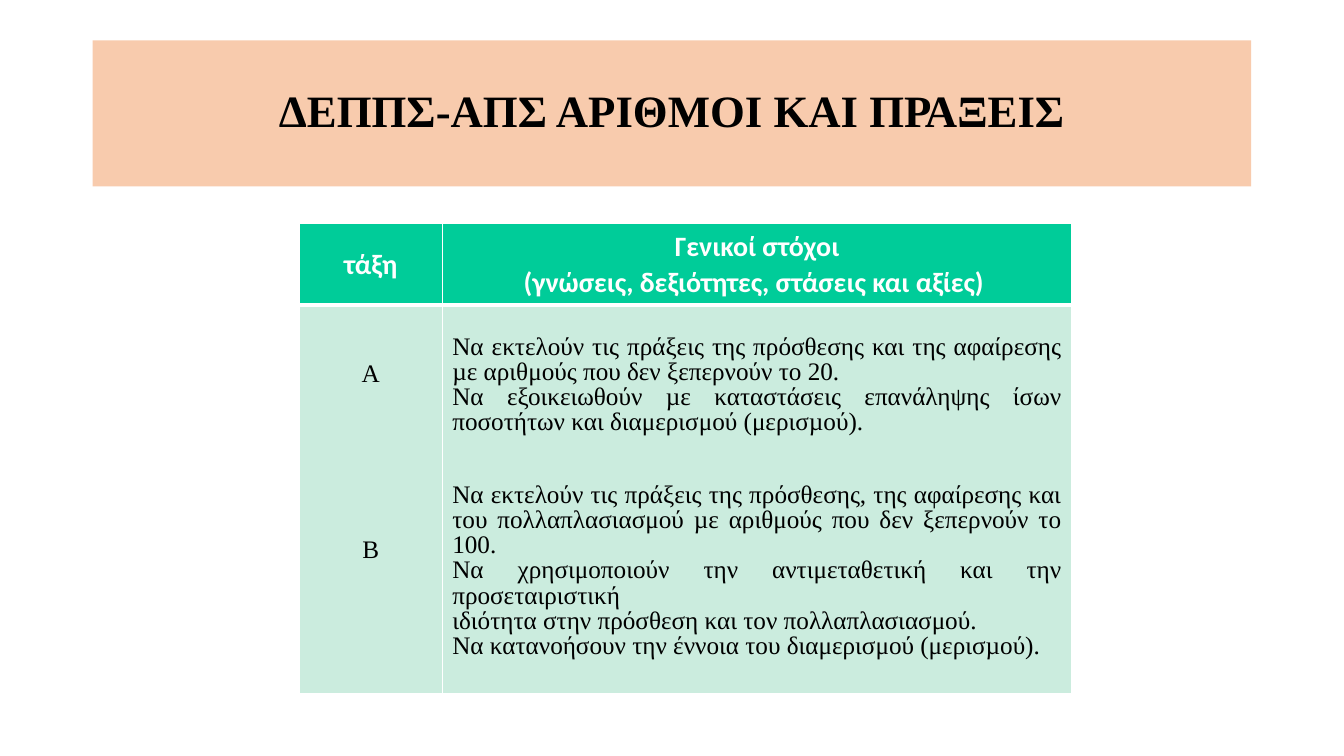
from dataclasses import dataclass

from lxml import etree
from pptx import Presentation
from pptx.dml.color import RGBColor
from pptx.enum.shapes import MSO_SHAPE
from pptx.enum.text import MSO_ANCHOR, PP_ALIGN
from pptx.oxml.ns import qn
from pptx.util import Inches, Pt

RECTANGLE = MSO_SHAPE.RECTANGLE
TOP, MIDDLE = MSO_ANCHOR.TOP, MSO_ANCHOR.MIDDLE
CENTER, JUSTIFY = PP_ALIGN.CENTER, PP_ALIGN.JUSTIFY
SERIF, SANS = "Times New Roman", "Calibri"
BLACK, WHITE = "000000", "FFFFFF"
PEACH, GREEN, MINT = "F8CBAD", "00CC99", "CBECDE"
THIN, THICK = 0.91, 2.95
COLUMN_WIDTHS = (1.42, 6.25)
ROW_HEIGHTS = (0.78, 3.85)


@dataclass(frozen=True)
class TextStyle:
    font: str
    size: float
    color: str
    bold: bool
    align: PP_ALIGN
    line_spacing: float


@dataclass(frozen=True)
class Line:
    text: str
    space_before: float = 0


@dataclass(frozen=True)
class Cell:
    row: int
    column: int
    lines: tuple[Line, ...]
    style: TextStyle
    fill: str
    anchor: MSO_ANCHOR
    top_margin: float


TITLE = TextStyle(SERIF, 32, BLACK, True, CENTER, 0.9)
HEADER = TextStyle(SANS, 20, WHITE, True, CENTER, 1.04)
GRADE = TextStyle(SERIF, 18, BLACK, False, CENTER, 0.9)
GOAL = TextStyle(SERIF, 18, BLACK, False, JUSTIFY, 0.9)

GRADES = (Line("Α"), Line("Β", 107.6))
GOALS = (
    Line("Να εκτελούν τις πράξεις της πρόσθεσης και της αφαίρεσης µε αριθμούς που δεν ξεπερνούν το 20."),
    Line("Να εξοικειωθούν µε καταστάσεις επανάληψης ίσων ποσοτήτων και διαμερισμού (μερισµού). "),
    Line("Να εκτελούν τις πράξεις της πρόσθεσης, της αφαίρεσης και του πολλαπλασιασμού µε αριθμούς "
         "που δεν ξεπερνούν το 100. ", 34),
    Line("Να χρησιμοποιούν την αντιμεταθετική και την προσεταιριστική"),
    Line("ιδιότητα στην πρόσθεση και τον πολλαπλασιασμού."),
    Line("Να κατανοήσουν την έννοια του διαμερισμού (μερισµού). "),
)
CELLS = (
    Cell(0, 0, (Line("τάξη"),), HEADER, GREEN, MIDDLE, 0.05),
    Cell(0, 1, (Line("Γενικοί στόχοι\v(γνώσεις, δεξιότητες, στάσεις και αξίες) "),),
         HEADER, GREEN, MIDDLE, 0.05),
    Cell(1, 0, GRADES, GRADE, MINT, TOP, 0.57),
    Cell(1, 1, GOALS, GOAL, MINT, TOP, 0.3),
)


def paint(target, color: str) -> None:
    target.fill.solid()
    target.fill.fore_color.rgb = RGBColor.from_string(color)


def write(frame, lines: tuple[Line, ...], style: TextStyle) -> None:
    frame.word_wrap = True
    frame.text = "\n".join(line.text for line in lines)
    for para, line in zip(frame.paragraphs, lines):
        para.alignment = style.align
        para.line_spacing = style.line_spacing
        para.space_before = Pt(line.space_before)
        for span in para.runs:
            span.font.name = style.font
            span.font.size = Pt(style.size)
            span.font.bold = style.bold
            span.font.color.rgb = RGBColor.from_string(style.color)


def add_borders(cell, widths: dict[str, float]) -> None:
    properties = cell._tc.get_or_add_tcPr()
    for index, (side, width) in enumerate(widths.items()):
        border = etree.Element(qn(f"a:{side}"), w=str(Pt(width)))
        fill = etree.SubElement(border, qn("a:solidFill"))
        etree.SubElement(fill, qn("a:srgbClr"), val=WHITE)
        properties.insert(index, border)


def add_title(page) -> None:
    box = page.shapes.add_shape(RECTANGLE, Inches(0.92), Inches(0.4), Inches(11.5), Inches(1.45))
    box.shadow.inherit = False
    box.line.fill.background()
    paint(box, PEACH)
    box.text_frame.vertical_anchor = MIDDLE
    write(box.text_frame, (Line("ΔΕΠΠΣ-ΑΠΣ ΑΡΙΘΜΟΙ ΚΑΙ ΠΡΑΞΕΙΣ"),), TITLE)


def add_goal_table(page) -> None:
    table = page.shapes.add_table(
        len(ROW_HEIGHTS), len(COLUMN_WIDTHS), Inches(2.97), Inches(2.22),
        Inches(sum(COLUMN_WIDTHS)), Inches(sum(ROW_HEIGHTS))).table
    table.horz_banding = False
    for column, width in zip(table.columns, COLUMN_WIDTHS):
        column.width = Inches(width)
    for row, height in zip(table.rows, ROW_HEIGHTS):
        row.height = Inches(height)
    for item in CELLS:
        cell = table.cell(item.row, item.column)
        cell.margin_left = cell.margin_right = Inches(0.1)
        cell.margin_top = Inches(item.top_margin)
        cell.margin_bottom = Inches(0.05)
        cell.vertical_anchor = item.anchor
        paint(cell, item.fill)
        write(cell.text_frame, item.lines, item.style)
        # The thick rule separates the header from the body
        is_header = item.row == 0
        add_borders(cell, {"lnL": THIN, "lnR": THIN,
                           "lnT": THIN if is_header else THICK,
                           "lnB": THICK if is_header else THIN})


def main() -> None:
    deck = Presentation()
    deck.slide_width, deck.slide_height = Inches(13.34), Inches(7.5)
    page = deck.slides.add_slide(deck.slide_layouts[6])
    add_title(page)
    add_goal_table(page)
    deck.save("out.pptx")


if __name__ == "__main__":
    main()
